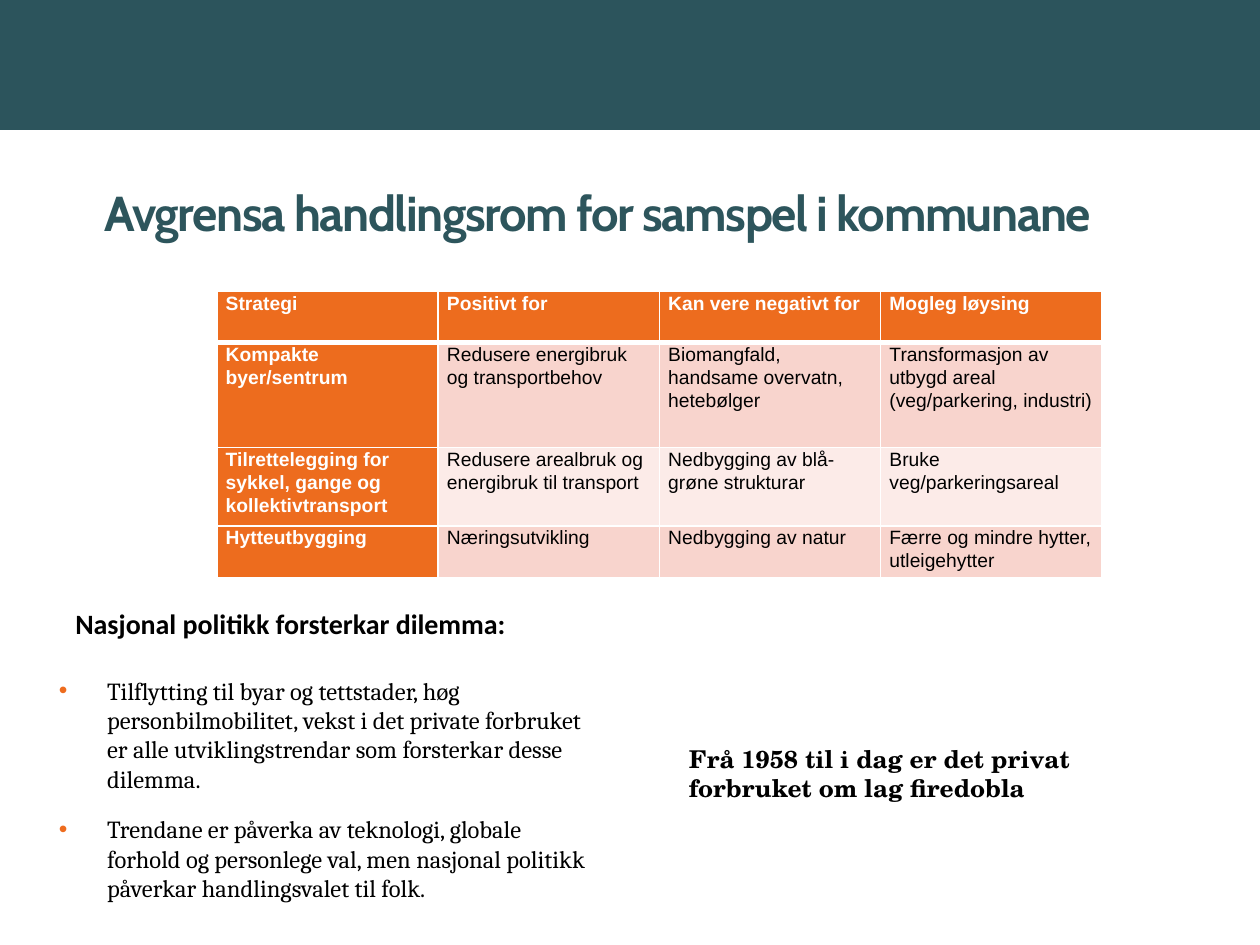
from lxml import etree
from pptx import Presentation
from pptx.dml.color import RGBColor
from pptx.enum.shapes import MSO_SHAPE
from pptx.enum.text import MSO_ANCHOR
from pptx.oxml.ns import qn
from pptx.util import Cm, Pt

RECTANGLE = MSO_SHAPE.RECTANGLE
MIDDLE = MSO_ANCHOR.MIDDLE
BLANK_LAYOUT = 6

COLORS = {
    "band": "2C545C", "title": "2D555C", "bullet": "EE6C1E", "head": "ED6C1E",
    "odd": "F8D4CD", "even": "FCEBE8", "white": "FFFFFF", "black": "000000",
}

TITLE = "Avgrensa handlingsrom for samspel i kommunane"
STRATEGIES = [
    ("Strategi", "Positivt for", "Kan vere negativt for", "Mogleg løysing"),
    ("Kompakte byer/sentrum", "Redusere energibruk og transportbehov",
     "Biomangfald, handsame overvatn, hetebølger",
     "Transformasjon av utbygd areal (veg/parkering, industri)"),
    ("Tilrettelegging for sykkel, gange og kollektivtransport",
     "Redusere arealbruk og energibruk til transport",
     "Nedbygging av blå-grøne strukturar", "Bruke veg/parkeringsareal"),
    ("Hytteutbygging", "Næringsutvikling", "Nedbygging av natur",
     "Færre og mindre hytter, utleigehytter"),
]
POLICY_HEADING = "Nasjonal politikk forsterkar dilemma:"
POLICY_POINTS = [
    "Tilflytting til byar og tettstader, høg personbilmobilitet, vekst i det private "
    "forbruket er alle utviklingstrendar som forsterkar desse dilemma.",
    "Trendane er påverka av teknologi, globale forhold og personlege val, men nasjonal "
    "politikk påverkar handlingsvalet til folk.",
]
CONSUMPTION = "Frå 1958 til i dag er det privat forbruket om lag firedobla"

COLUMN_WIDTH = 4.46
ROW_HEIGHTS = [1.04, 2.11, 1.58, 1.04]


def rgb(name):
    return RGBColor.from_string(COLORS[name])


def write(para, text, font, size, color="black", bold=False):
    para.text = text
    span = para.runs[0]
    span.font.name = font
    span.font.size = Pt(size)
    span.font.bold = bold
    span.font.color.rgb = rgb(color)
    return span


def add_text_frame(slide, left, top, width, height):
    """Add a wrapping text box without margins and return its text frame."""
    box = slide.shapes.add_textbox(Cm(left), Cm(top), Cm(width), Cm(height))
    frame = box.text_frame
    frame.word_wrap = True
    frame.margin_left = frame.margin_top = frame.margin_right = frame.margin_bottom = 0
    return frame


def indent(para, left, first_line=0):
    properties = para._p.get_or_add_pPr()
    properties.set("marL", str(Cm(left)))
    properties.set("indent", str(Cm(first_line)))
    return properties


def add_bullet(para):
    properties = indent(para, 0.97, -0.97)
    color = etree.SubElement(properties, qn("a:buClr"))
    etree.SubElement(color, qn("a:srgbClr"), val=COLORS["bullet"])
    etree.SubElement(properties, qn("a:buFont"), typeface="Arial")
    etree.SubElement(properties, qn("a:buChar"), char="•")


def set_borders(cell, widths):
    """Draw white borders; widths maps L, R, T and B to points."""
    properties = cell._tc.get_or_add_tcPr()
    for position, (side, width) in enumerate(widths.items()):
        line = etree.Element(qn(f"a:ln{side}"), w=str(Pt(width)))
        fill = etree.SubElement(line, qn("a:solidFill"))
        etree.SubElement(fill, qn("a:srgbClr"), val=COLORS["white"])
        properties.insert(position, line)


def add_strategy_table(slide):
    rows, columns = len(STRATEGIES), len(STRATEGIES[0])
    table = slide.shapes.add_table(
        rows, columns, Cm(4.37), Cm(5.87),
        Cm(COLUMN_WIDTH * columns), Cm(sum(ROW_HEIGHTS))).table
    for column in table.columns:
        column.width = Cm(COLUMN_WIDTH)
    for r, (texts, height) in enumerate(zip(STRATEGIES, ROW_HEIGHTS)):
        table.rows[r].height = Cm(height)
        for c, text in enumerate(texts):
            cell = table.cell(r, c)
            heading = r == 0 or c == 0
            cell.margin_left = cell.margin_right = Cm(0.18)
            cell.margin_top = cell.margin_bottom = 0
            cell.fill.solid()
            cell.fill.fore_color.rgb = rgb("head" if heading else "odd" if r % 2 else "even")
            set_borders(cell, {"L": 1, "R": 1, "T": 3 if r == 1 else 1, "B": 3 if r == 0 else 1})
            para = cell.text_frame.paragraphs[0]
            para.line_spacing = 1.07
            para.space_after = Pt(8)
            write(para, text, "Arial", 11, "white" if heading else "black", heading)


def add_policy(slide):
    frame = add_text_frame(slide, 1.19, 12.19, 10.77, 6.68)
    heading = frame.paragraphs[0]
    indent(heading, 0.33)
    heading.line_spacing = 1.07
    heading.space_after = Pt(8)
    write(heading, POLICY_HEADING, "Calibri", 16, bold=True)
    for point in POLICY_POINTS:
        para = frame.add_paragraph()
        add_bullet(para)
        para.space_before = Pt(12)
        write(para, point, "Cambria", 14)


def main():
    deck = Presentation()
    deck.slide_width, deck.slide_height = Cm(25.4), Cm(19.05)
    slide = deck.slides.add_slide(deck.slide_layouts[BLANK_LAYOUT])

    band = slide.shapes.add_shape(RECTANGLE, 0, 0, deck.slide_width, Cm(2.62))
    band.shadow.inherit = False
    band.fill.solid()
    band.fill.fore_color.rgb = rgb("band")
    band.line.fill.background()

    title = add_text_frame(slide, 2.11, 3.2, 21.62, 2.16)
    title.vertical_anchor = MIDDLE
    span = write(title.paragraphs[0], TITLE, "Cabin", 28, "title", True)
    span.font._element.set("spc", "-80")

    add_policy(slide)
    consumption = add_text_frame(slide, 13.89, 14.99, 8.94, 1.19)
    write(consumption.paragraphs[0], CONSUMPTION, "TeX Gyre Schola", 14, bold=True)
    add_strategy_table(slide)
    deck.save("out.pptx")


if __name__ == "__main__":
    main()
